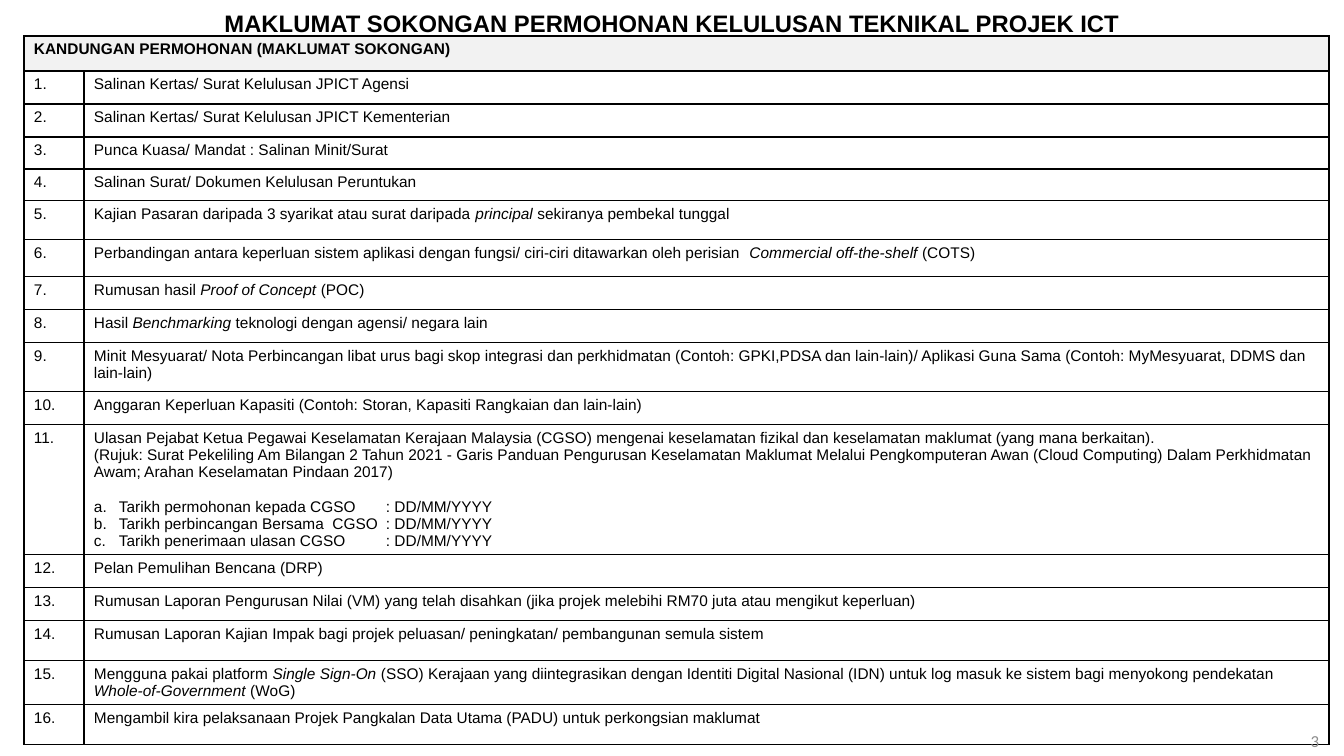
"""Build the checklist slide of supporting information for ICT project approval."""
from dataclasses import dataclass

from lxml import etree
from pptx import Presentation
from pptx.dml.color import RGBColor
from pptx.enum.text import MSO_ANCHOR, MSO_AUTO_SIZE, PP_ALIGN
from pptx.oxml.ns import qn
from pptx.util import Pt

TOP, MIDDLE = MSO_ANCHOR.TOP, MSO_ANCHOR.MIDDLE
LEFT, CENTER, RIGHT = PP_ALIGN.LEFT, PP_ALIGN.CENTER, PP_ALIGN.RIGHT
NO_FIT = MSO_AUTO_SIZE.NONE

TITLE = "MAKLUMAT SOKONGAN PERMOHONAN KELULUSAN TEKNIKAL PROJEK ICT"
HEADING = "KANDUNGAN PERMOHONAN (MAKLUMAT SOKONGAN)"
PAGE_NUMBER = "3"
ITEMS = [
    ["Salinan Kertas/ Surat Kelulusan JPICT Agensi"],
    ["Salinan Kertas/ Surat Kelulusan JPICT Kementerian"],
    ["Punca Kuasa/ Mandat : Salinan Minit/Surat"],
    ["Salinan Surat/ Dokumen Kelulusan Peruntukan"],
    ["Kajian Pasaran daripada 3 syarikat atau surat daripada *principal *sekiranya pembekal tunggal"],
    ["Perbandingan antara keperluan sistem aplikasi dengan fungsi/ ciri-ciri ditawarkan oleh "
     "perisian  *Commercial off-the-shelf *(COTS)"],
    ["Rumusan hasil *Proof of Concept *(POC)"],
    ["Hasil* Benchmarking* teknologi dengan agensi/ negara lain"],
    ["Minit Mesyuarat/ Nota Perbincangan libat urus bagi skop integrasi dan perkhidmatan "
     "(Contoh: GPKI,PDSA dan lain-lain)/ Aplikasi Guna Sama (Contoh: MyMesyuarat, DDMS dan lain-lain)"],
    ["Anggaran Keperluan Kapasiti (Contoh: Storan, Kapasiti Rangkaian dan lain-lain)"],
    ["Ulasan Pejabat Ketua Pegawai Keselamatan Kerajaan Malaysia (CGSO) mengenai keselamatan "
     "fizikal dan keselamatan maklumat (yang mana berkaitan).",
     "(Rujuk: Surat Pekeliling Am Bilangan 2 Tahun 2021 - Garis Panduan Pengurusan Keselamatan "
     "Maklumat Melalui Pengkomputeran Awan (Cloud Computing) Dalam Perkhidmatan Awam; "
     "Arahan Keselamatan Pindaan 2017)"],
    ["Pelan Pemulihan Bencana (DRP)"],
    ["Rumusan Laporan Pengurusan Nilai (VM) yang telah disahkan (jika projek melebihi RM70 juta "
     "atau mengikut keperluan)"],
    ["Rumusan Laporan Kajian Impak bagi projek peluasan/ peningkatan/ pembangunan semula sistem"],
    ["Mengguna pakai platform *Single Sign-On* (SSO) Kerajaan yang diintegrasikan dengan Identiti "
     "Digital Nasional (IDN) untuk log masuk ke sistem bagi menyokong pendekatan "
     "*Whole-of-Government* (WoG)"],
    ["Mengambil kira pelaksanaan Projek Pangkalan Data Utama (PADU) untuk perkongsian maklumat"],
]
DATES_ITEM = 11
DATES = [
    "Tarikh permohonan kepada CGSO\t: DD/MM/YYYY",
    "Tarikh perbincangan Bersama  CGSO\t: DD/MM/YYYY",
    "Tarikh penerimaan ulasan CGSO\t: DD/MM/YYYY",
]

SCALE = 9071
SLIDE_SIZE = (1344, 756)
TITLE_BOX = (0, 4, 1344, 64)
TABLE_CORNER = (24, 36)
COLUMNS = [60, 1245]
ROWS = [35, 33, 33, 32, 32, 39, 37, 33, 33, 49, 33, 130, 33, 33, 40, 44, 40]
NUMBER_BOX = (1027, 721, 302, 40)
CELL_MARGINS = {"margin_left": 10, "margin_right": 10, "margin_top": 5, "margin_bottom": 3}
DATE_INDENT, DATE_TAB = 25, 292


@dataclass(frozen=True)
class Theme:
    """Colours, fonts and type sizes of the slide."""
    ink: str = "000000"
    paper: str = "FFFFFF"
    band: str = "F2F2F2"
    muted: str = "8C8C8C"
    font: str = "Arial"
    number_font: str = "Calibri"
    title_size: int = 17
    body_size: int = 11
    number_size: int = 12


THEME = Theme()
BODY = {"name": THEME.font, "size": Pt(THEME.body_size), "bold": False}
HEADER = {**BODY, "bold": True}
TITLE_FONT = {**HEADER, "size": Pt(THEME.title_size)}
NUMBER_FONT = {"name": THEME.number_font, "size": Pt(THEME.number_size)}


def px(*lengths):
    """Turn px lengths into EMU."""
    return [length * SCALE for length in lengths]


def apply(target, values):
    """Set each attribute of the target from a dict."""
    for name, value in values.items():
        setattr(target, name, value)


def write(para, text, font, color=THEME.ink, align=LEFT):
    """Fill a paragraph; asterisks switch italics on and off."""
    para.alignment = align
    for index, part in enumerate(text.split("*")):
        span = para.add_run()
        span.text = part
        apply(span.font, {**font, "italic": index % 2 == 1})
        span.font.color.rgb = RGBColor.from_string(color)


def add_date(frame, text, first):
    """Add one lettered date line with its colon on a tab stop."""
    para = frame.add_paragraph()
    if first:
        para.space_before = Pt(12.5)
    indent, tab = px(DATE_INDENT, DATE_TAB)
    props = para._p.get_or_add_pPr()
    props.set("marL", str(indent))
    props.set("indent", str(-indent))
    etree.SubElement(props, qn("a:buFont"), typeface=THEME.font)
    etree.SubElement(props, qn("a:buAutoNum"), type="alphaLcPeriod")
    tabs = etree.SubElement(props, qn("a:tabLst"))
    etree.SubElement(tabs, qn("a:tab"), pos=str(tab), algn="l")
    write(para, text, BODY)


def style_cell(cell, color):
    """Give a cell its margins, borders and fill."""
    apply(cell, {name: length * SCALE for name, length in CELL_MARGINS.items()})
    cell.vertical_anchor = TOP
    props = cell._tc.get_or_add_tcPr()
    for side in ("lnL", "lnR", "lnT", "lnB"):
        line = etree.SubElement(props, qn(f"a:{side}"), w=str(Pt(1)))
        fill = etree.SubElement(line, qn("a:solidFill"))
        etree.SubElement(fill, qn("a:srgbClr"), val=THEME.ink)
    cell.fill.solid()
    cell.fill.fore_color.rgb = RGBColor.from_string(color)


def add_checklist(page):
    """Add the numbered table of supporting information."""
    frame = page.shapes.add_table(len(ROWS), len(COLUMNS), *px(*TABLE_CORNER, sum(COLUMNS), sum(ROWS)))
    table = frame.table
    apply(table, {"first_row": False, "horz_banding": False})
    for column, width in zip(table.columns, px(*COLUMNS)):
        column.width = width
    for index, (row, height) in enumerate(zip(table.rows, px(*ROWS))):
        row.height = height
        for cell in row.cells:
            style_cell(cell, THEME.paper if index else THEME.band)
    table.cell(0, 0).merge(table.cell(0, 1))
    write(table.cell(0, 0).text_frame.paragraphs[0], HEADING, HEADER)
    for number, lines in enumerate(ITEMS, 1):
        write(table.cell(number, 0).text_frame.paragraphs[0], f"{number}.", BODY)
        text_frame = table.cell(number, 1).text_frame
        for index, line in enumerate(lines):
            para = text_frame.add_paragraph() if index else text_frame.paragraphs[0]
            write(para, line, BODY)
    dates_frame = table.cell(DATES_ITEM, 1).text_frame
    for index, date in enumerate(DATES):
        add_date(dates_frame, date, index == 0)


def main():
    """Assemble and save the slide."""
    deck = Presentation()
    deck.slide_width, deck.slide_height = px(*SLIDE_SIZE)
    page = deck.slides.add_slide(deck.slide_layouts[5])

    title = page.shapes.title
    apply(title, dict(zip(("left", "top", "width", "height"), px(*TITLE_BOX))))
    apply(title.text_frame, {"vertical_anchor": TOP, "auto_size": NO_FIT, "word_wrap": True})
    write(title.text_frame.paragraphs[0], TITLE, TITLE_FONT, align=CENTER)

    add_checklist(page)

    box = page.shapes.add_textbox(*px(*NUMBER_BOX))
    apply(box.text_frame, {"vertical_anchor": MIDDLE, "word_wrap": True})
    write(box.text_frame.paragraphs[0], PAGE_NUMBER, NUMBER_FONT, THEME.muted, RIGHT)

    deck.save("out.pptx")


if __name__ == "__main__":
    main()
